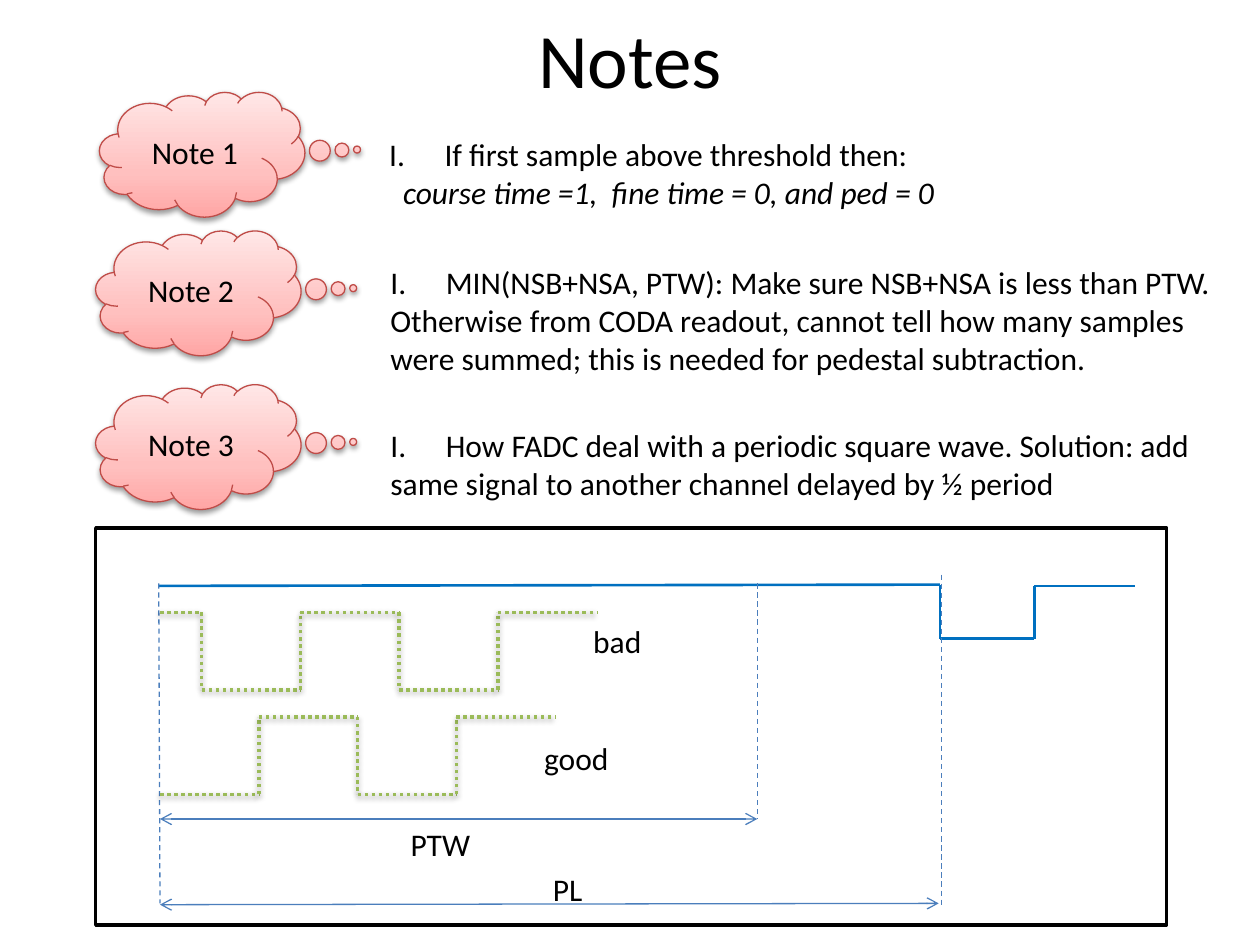
"""Build the Notes slide: three numbered remarks above a timing diagram."""
from itertools import pairwise

from lxml.etree import SubElement
from pptx import Presentation
from pptx.dml.color import RGBColor
from pptx.enum.dml import MSO_LINE
from pptx.enum.shapes import MSO_CONNECTOR, MSO_SHAPE
from pptx.enum.text import MSO_ANCHOR, PP_ALIGN
from pptx.oxml import parse_xml
from pptx.oxml.ns import qn
from pptx.util import Inches, Pt

TITLE = "Notes"
NOTES = [
    {"label": "Note 1", "cloud": (0.79, 0.73), "body": (2.99, 1.02, 4.59, 0.71),
     "lines": ["If first sample above threshold then:"],
     "formula": "course time =1,  fine time = 0, and ped = 0"},
    {"label": "Note 2", "cloud": (0.76, 1.83), "body": (3, 2.04, 6.77, 1.01),
     "lines": ["MIN(NSB+NSA, PTW): Make sure NSB+NSA is less than PTW.",
               "Otherwise from CODA readout, cannot tell how many samples",
               "were summed; this is needed for pedestal subtraction."]},
    {"label": "Note 3", "cloud": (0.76, 3.05), "body": (3, 3.33, 6.62, 0.71),
     "lines": ["How FADC deal with a periodic square wave. Solution: add",
               "same signal to another channel delayed by ½ period"]},
]
DIAGRAM_LABELS = [("bad", (4.61, 4.89, 0.59, 0.4)), ("good", (4.22, 5.82, 0.72, 0.4)),
                  ("PTW", (3.16, 6.5, 0.68, 0.36)), ("PL", (4.29, 6.86, 0.44, 0.36))]

START, PTW_END, PL_END = 1.27, 6.01, 7.46
HALF_PERIOD, SWING = 0.784, 0.615
FRAME = (0.76, 4.19, 8.5, 3.15)
CLOUD_SIZE = (1.63, 0.99)
TRIGGER = [(1.26, 4.65), (PL_END, 4.64), (PL_END, 5.07),
           (8.21, 5.07), (8.21, 4.65), (9.01, 4.65)]
SQUARE_WAVES = [{"first_edge": 1.6, "top": 4.86, "levels": (0, 1, 0, 1, 0)},
                {"first_edge": START + HALF_PERIOD, "top": 5.69, "levels": (1, 0, 1, 0)}]
GUIDES = [((START - 0.01, 4.63), (START, 7.17)), ((PTW_END, 4.63), (PTW_END, 6.5)),
          ((PL_END + 0.01, 4.56), (PL_END + 0.01, 7.18))]
SPANS = [((START, 6.5), (PTW_END, 6.5)), ((START, 7.18), (PL_END - 0.01, 7.17))]

THEME = {
    "ink": "000000", "cloud_line": "BF4C48",
    "cloud_stops": [(0, "FFA6A5"), (35, "FFC0BF"), (100, "FFE7E7")],
    "title": {"name": "Calibri", "size": Pt(44)},
    "text": {"name": "Calibri", "size": Pt(18)},
    "formula": {"name": "Calibri", "size": Pt(18), "italic": True},
    "trigger": ("0070C0", {"width": Pt(1.5)}),
    "guide": ("4B7EBC", {"width": Pt(0.75), "dash_style": MSO_LINE.DASH}),
    "span": ("4B7EBC", {"width": Pt(0.75)}),
    "wave": ("9BBB59", {"width": Pt(2), "dash_style": MSO_LINE.ROUND_DOT}),
}
NAMESPACE = 'xmlns:a="http://schemas.openxmlformats.org/drawingml/2006/main"'
SHADOW = (f'<a:effectLst {NAMESPACE}><a:outerShdw blurRad="40000" dist="20000" dir="5400000" '
          'rotWithShape="0"><a:srgbClr val="000000"><a:alpha val="38000"/></a:srgbClr>'
          '</a:outerShdw></a:effectLst>')
NO_SHADOW = f"<a:effectLst {NAMESPACE}/>"


def apply_format(target, values):
    for attribute, value in values.items():
        setattr(target, attribute, value)


def write(paragraph, words, style):
    run = paragraph.add_run()
    run.text = words
    apply_format(run.font, THEME[style])
    run.font.color.rgb = RGBColor.from_string(THEME["ink"])


def add_text(slide, box, words, style="text", **frame_format):
    frame = slide.shapes.add_textbox(*map(Inches, box)).text_frame
    apply_format(frame, {"word_wrap": False, **frame_format})
    write(frame.paragraphs[0], words, style)
    return frame


def add_cloud(slide, corner, label):
    cloud = slide.shapes.add_shape(MSO_SHAPE.CLOUD_CALLOUT, *map(Inches, corner + CLOUD_SIZE))
    cloud.adjustments[0], cloud.adjustments[1] = 0.754, -0.038
    cloud.line.color.rgb = RGBColor.from_string(THEME["cloud_line"])
    cloud.line.width = Pt(0.75)
    stops = "".join(f'<a:gs pos="{share * 1000}"><a:srgbClr val="{color}"/></a:gs>'
                    for share, color in THEME["cloud_stops"])
    gradient = parse_xml(f'<a:gradFill {NAMESPACE} rotWithShape="1"><a:gsLst>{stops}</a:gsLst>'
                         '<a:lin ang="16200000" scaled="0"/></a:gradFill>')
    properties = cloud.element.spPr
    properties.find(qn("a:ln")).addprevious(gradient)
    properties.append(parse_xml(SHADOW))
    cloud.text_frame.vertical_anchor = MSO_ANCHOR.MIDDLE
    paragraph = cloud.text_frame.paragraphs[0]
    paragraph.alignment = PP_ALIGN.CENTER
    write(paragraph, label, "text")


def add_note(slide, note):
    add_cloud(slide, note["cloud"], note["label"])
    first, *rest = note["lines"]
    frame = add_text(slide, note["body"], first)
    numbered = frame.paragraphs[0]._p.get_or_add_pPr()
    numbered.set("marL", str(Inches(0.44)))
    numbered.set("indent", str(-Inches(0.44)))
    SubElement(numbered, qn("a:buFont")).set("typeface", "+mj-lt")
    SubElement(numbered, qn("a:buAutoNum")).set("type", "romanUcPeriod")
    for line in rest:
        write(frame.add_paragraph(), line, "text")
    if "formula" in note:
        paragraph = frame.add_paragraph()
        paragraph._p.get_or_add_pPr().set("marL", str(Inches(0.11)))
        write(paragraph, note["formula"], "formula")


def add_trace(slide, points, style, effect=NO_SHADOW, arrows=()):
    color, line_format = THEME[style]
    for start, end in pairwise(points):
        segment = slide.shapes.add_connector(MSO_CONNECTOR.STRAIGHT, *map(Inches, start + end))
        segment.line.color.rgb = RGBColor.from_string(color)
        apply_format(segment.line, line_format)
        properties = segment.element.spPr
        for arrow in arrows:
            SubElement(properties.find(qn("a:ln")), qn(arrow)).set("type", "arrow")
        properties.append(parse_xml(effect))


def wave_points(first_edge, top, levels):
    edges = [START] + [first_edge + HALF_PERIOD * step for step in range(len(levels))]
    return [(x, top + SWING * level)
            for level, ends in zip(levels, pairwise(edges)) for x in ends]


def add_diagram(slide):
    frame = slide.shapes.add_shape(MSO_SHAPE.RECTANGLE, *map(Inches, FRAME))
    frame.shadow.inherit = False
    frame.fill.background()
    frame.line.color.rgb = RGBColor.from_string(THEME["ink"])
    frame.line.width = Pt(2)
    add_trace(slide, TRIGGER, "trigger")
    for guide in GUIDES:
        add_trace(slide, guide, "guide")
    for span in SPANS:
        add_trace(slide, span, "span", arrows=("a:headEnd", "a:tailEnd"))
    for wave in SQUARE_WAVES:
        add_trace(slide, wave_points(**wave), "wave", effect=SHADOW)
    for words, box in DIAGRAM_LABELS:
        add_text(slide, box, words)


def main():
    deck = Presentation()
    deck.slide_width, deck.slide_height = Inches(10), Inches(7.5)
    slide = deck.slides.add_slide(deck.slide_layouts[6])
    title = add_text(slide, (0.5, 0, 9, 0.92), TITLE, "title",
                     word_wrap=True, vertical_anchor=MSO_ANCHOR.MIDDLE)
    title.paragraphs[0].alignment = PP_ALIGN.CENTER
    for note in NOTES:
        add_note(slide, note)
    add_diagram(slide)
    deck.save("out.pptx")


if __name__ == "__main__":
    main()
